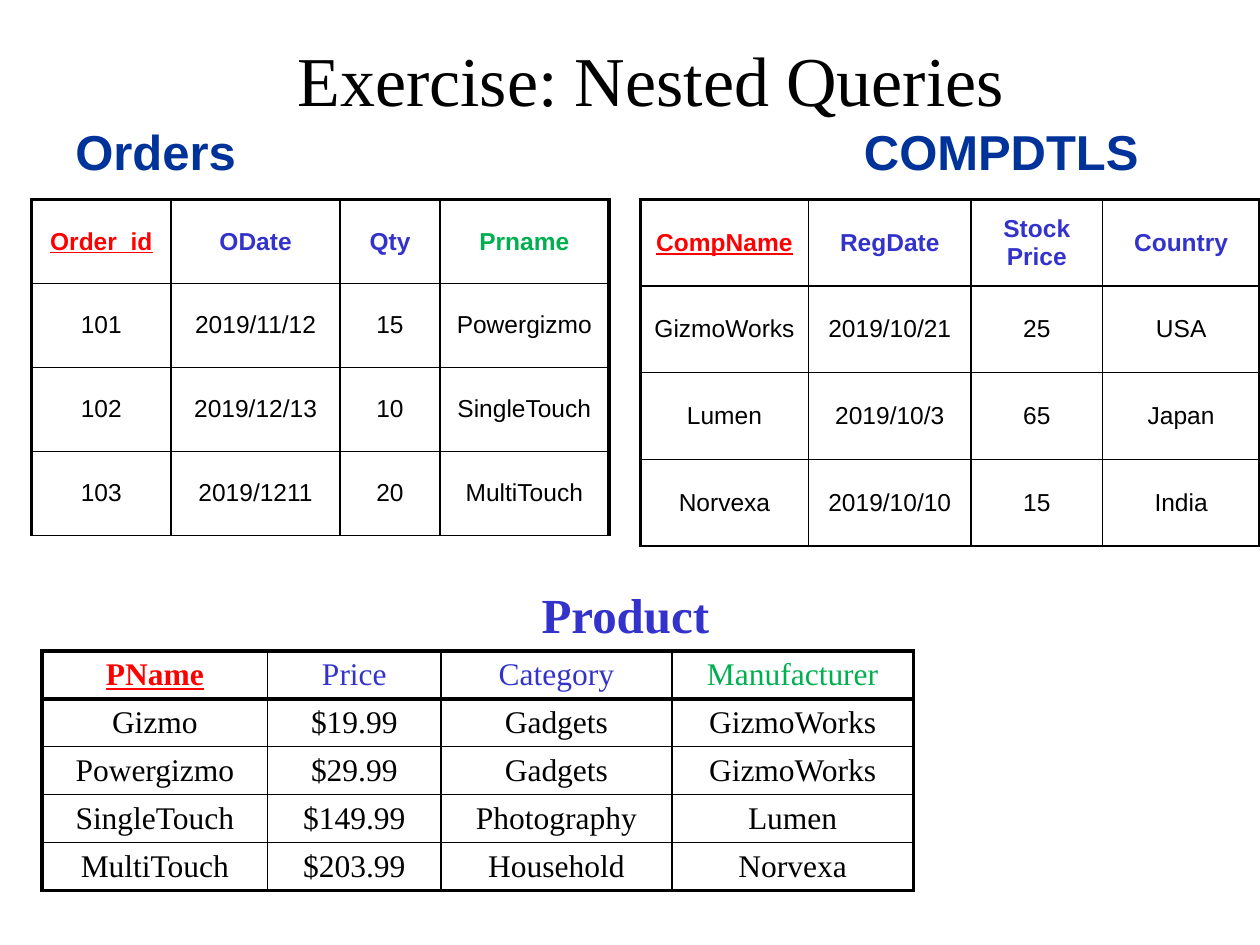
"""Build the nested queries exercise slide with its three tables."""
import pptx
import pptx.dml.color
import pptx.enum.text
import pptx.oxml
import pptx.oxml.ns
import pptx.util

BLACK = pptx.dml.color.RGBColor(0x00, 0x00, 0x00)
WHITE = pptx.dml.color.RGBColor(0xFF, 0xFF, 0xFF)
RED = pptx.dml.color.RGBColor(0xFF, 0x00, 0x00)
BLUE = pptx.dml.color.RGBColor(0x33, 0x33, 0xCC)
NAVY = pptx.dml.color.RGBColor(0x00, 0x33, 0x99)
GREEN = pptx.dml.color.RGBColor(0x00, 0xB0, 0x50)
SERIF, SANS = "Times New Roman", "Arial"
THIN, THICK = 1, 2.25

ORDERS = [
    ["Order_id", "ODate", "Qty", "Prname"],
    ["101", "2019/11/12", "15", "Powergizmo"],
    ["102", "2019/12/13", "10", "SingleTouch"],
    ["103", "2019/1211", "20", "MultiTouch"],
]
COMPANIES = [
    ["CompName", "RegDate", "Stock Price", "Country"],
    ["GizmoWorks", "2019/10/21", "25", "USA"],
    ["Lumen", "2019/10/3", "65", "Japan"],
    ["Norvexa", "2019/10/10", "15", "India"],
]
PRODUCTS = [
    ["PName", "Price", "Category", "Manufacturer"],
    ["Gizmo", "$19.99", "Gadgets", "GizmoWorks"],
    ["Powergizmo", "$29.99", "Gadgets", "GizmoWorks"],
    ["SingleTouch", "$149.99", "Photography", "Lumen"],
    ["MultiTouch", "$203.99", "Household", "Norvexa"],
]


class SlideBuilder:
    """Places text and tables on a grid of 120 columns by 90 rows."""

    def __init__(self, presentation):
        self.column = presentation.slide_width / 120
        self.row = presentation.slide_height / 90
        self.slide = presentation.slides.add_slide(presentation.slide_layouts[6])

    def across(self, columns):
        return pptx.util.Emu(round(columns * self.column))

    def down(self, rows):
        return pptx.util.Emu(round(rows * self.row))

    def format(self, paragraph, font, size, color, bold=False, underline=False):
        for run in paragraph.runs:
            run.font.name = font
            run.font.size = pptx.util.Pt(size)
            run.font.color.rgb = color
            run.font.bold = bold
            run.font.underline = underline

    def text(self, text, left, top, width, height, font, size, color,
             bold=False, title=False):
        shape = self.slide.shapes.add_textbox(
            self.across(left), self.down(top), self.across(width), self.down(height))
        frame = shape.text_frame
        frame.text = text
        frame.word_wrap = title
        if title:
            frame.vertical_anchor = pptx.enum.text.MSO_ANCHOR.MIDDLE
            frame.paragraphs[0].alignment = pptx.enum.text.PP_ALIGN.CENTER
        self.format(frame.paragraphs[0], font, size, color, bold)

    def border(self, cell, side, width):
        line = pptx.oxml.parse_xml(
            f'<a:ln{side} {pptx.oxml.ns.nsdecls("a")} w="{pptx.util.Pt(width)}">'
            f'<a:solidFill><a:srgbClr val="{BLACK}"/></a:solidFill></a:ln{side}>')
        cell._tc.get_or_add_tcPr().append(line)

    def table(self, rows, left, top, widths, height, font, size, header_colors,
              bold_header=True, rule=THIN, bottom=THIN):
        last_row, last_column = len(rows) - 1, len(widths) - 1
        table = self.slide.shapes.add_table(
            len(rows), len(widths), self.across(left), self.down(top),
            self.across(sum(widths)), self.down(height * len(rows))).table
        table.first_row = table.horz_banding = False
        for column, width in zip(table.columns, widths):
            column.width = self.across(width)
        for r, values in enumerate(rows):
            table.rows[r].height = self.down(height)
            for c, value in enumerate(values):
                cell = table.cell(r, c)
                cell.margin_left = cell.margin_right = pptx.util.Inches(0.08)
                cell.margin_top = cell.margin_bottom = pptx.util.Inches(0.04)
                cell.vertical_anchor = pptx.enum.text.MSO_ANCHOR.MIDDLE
                horizontal = [THICK, rule] + [THIN] * (last_row - 1) + [bottom]
                self.border(cell, "L", THICK if c == 0 else THIN)
                self.border(cell, "R", THICK if c == last_column else THIN)
                self.border(cell, "T", horizontal[r])
                self.border(cell, "B", horizontal[r + 1])
                cell.fill.solid()
                cell.fill.fore_color.rgb = WHITE
                cell.text_frame.text = value
                paragraph = cell.text_frame.paragraphs[0]
                paragraph.alignment = pptx.enum.text.PP_ALIGN.CENTER
                header, key = r == 0, r == 0 and c == 0
                self.format(paragraph, font, size,
                            header_colors[c] if header else BLACK,
                            key or (header and bold_header), key)


def main():
    presentation = pptx.Presentation()
    presentation.slide_width = pptx.util.Inches(10)
    presentation.slide_height = pptx.util.Inches(7.5)
    builder = SlideBuilder(presentation)
    linked_header = [RED, BLUE, BLUE, GREEN]
    plain_header = [RED, BLUE, BLUE, BLUE]

    builder.text("Exercise: Nested Queries", 11, 0, 102, 15, SERIF, 40, BLACK, title=True)
    builder.table(PRODUCTS, 4, 62, [21.5, 16.5, 22, 23], 4.54, SERIF, 18,
                  linked_header, bold_header=False, rule=THICK, bottom=THICK)
    builder.text("Product", 50.4, 55.1, 18.6, 6.8, SERIF, 28, BLUE, bold=True)
    builder.text("Orders", 6, 11, 17.9, 6.8, SANS, 28, NAVY, bold=True)
    builder.table(ORDERS, 3, 19, [13.3, 16.1, 9.5, 16.1], 8, SANS, 14, linked_header)
    builder.table(COMPANIES, 61, 19, [16, 15.5, 12.5, 15], 8.25, SANS, 14, plain_header)
    builder.text("COMPDTLS", 81.1, 11, 28.9, 6.8, SANS, 28, NAVY, bold=True)
    presentation.save("out.pptx")


if __name__ == "__main__":
    main()
